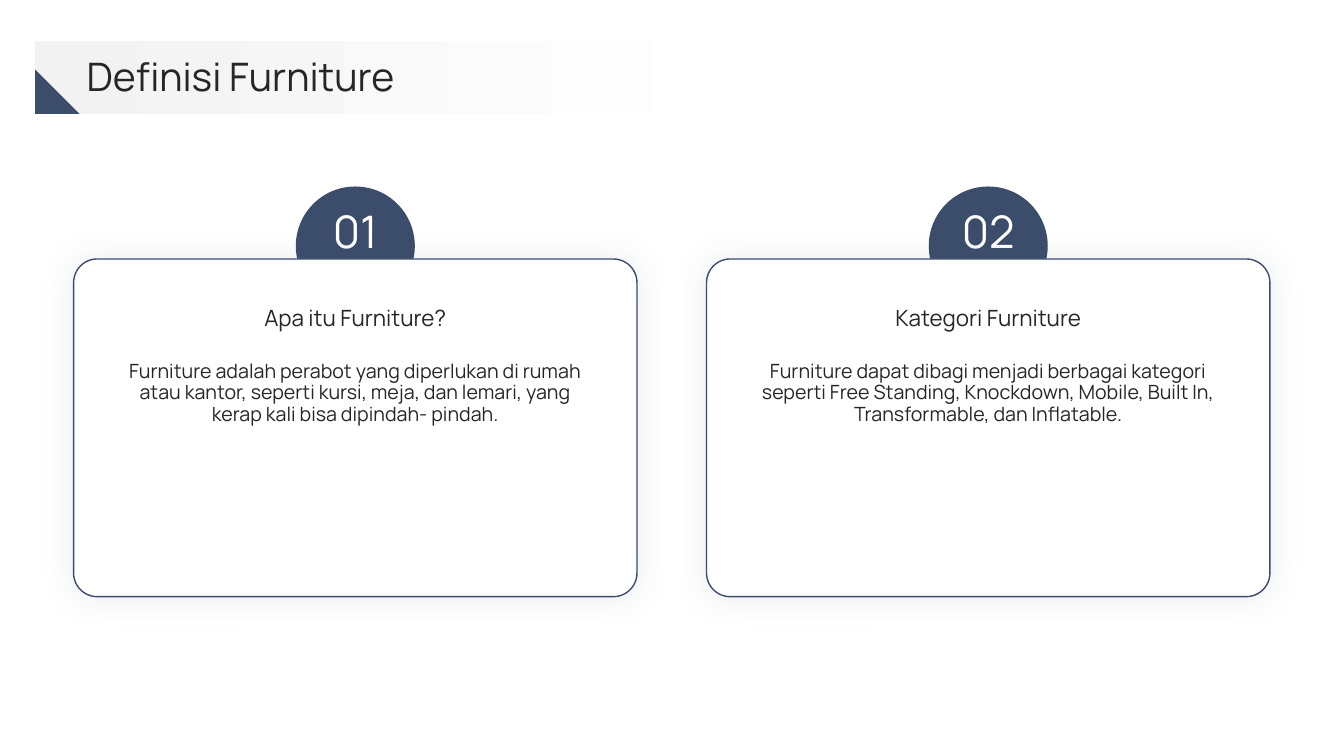
import pptx
import pptx.dml.color
import pptx.enum.shapes
import pptx.enum.text
import pptx.oxml
import pptx.oxml.ns
import pptx.util

Pt = pptx.util.Pt
SHAPES = pptx.enum.shapes.MSO_SHAPE
ALIGN = pptx.enum.text.PP_ALIGN
ANCHOR = pptx.enum.text.MSO_ANCHOR

CARDS = [
    ("01", "Apa itu Furniture?",
     "Furniture adalah perabot yang diperlukan di rumah atau kantor, seperti kursi, "
     "meja, dan lemari, yang kerap kali bisa dipindah- pindah."),
    ("02", "Kategori Furniture",
     "Furniture dapat dibagi menjadi berbagai kategori seperti Free Standing, "
     "Knockdown, Mobile, Built In, Transformable, dan Inflatable."),
]
CARD_LEFT, CARD_WIDTH, CARD_PITCH = 52.6, 402.4, 452.1
BADGE_SIZE, NUMBER_WIDTH, TEXT_WIDTH = 85, 64.8, 345.6


class FurnitureSlide:
    font = "Manrope"
    colors = {"navy": "3C4C6B", "ink": "262626", "white": "FFFFFF", "mist": "F2F2F2"}

    def __init__(self, slide):
        self.slide = slide

    def color(self, name):
        return pptx.dml.color.RGBColor.from_string(self.colors[name])

    def shape(self, kind, left, top, width, height, fill):
        item = self.slide.shapes.add_shape(kind, Pt(left), Pt(top), Pt(width), Pt(height))
        item.fill.solid()
        item.fill.fore_color.rgb = self.color(fill)
        item.line.fill.background()
        item.shadow.inherit = False
        return item

    def card(self, left, top, width, height):
        panel = self.shape(SHAPES.ROUNDED_RECTANGLE, left, top, width, height, "white")
        panel.adjustments[0] = 0.07
        panel.line.color.rgb = self.color("navy")
        panel.line.width = Pt(1)
        effects = panel.element.spPr.find(pptx.oxml.ns.qn("a:effectLst"))
        effects.append(pptx.oxml.parse_xml(
            f'<a:outerShdw {pptx.oxml.ns.nsdecls("a")} blurRad="{Pt(25)}" dist="0" '
            f'dir="5400000" algn="ctr" rotWithShape="0"><a:srgbClr val="{self.colors["navy"]}">'
            '<a:alpha val="10000"/></a:srgbClr></a:outerShdw>'))

    def gradient_band(self, left, top, width, height):
        band = self.shape(SHAPES.RECTANGLE, left, top, width, height, "mist")
        band.fill.gradient()
        band.fill.gradient_angle = 0
        for stop, (position, name) in zip(band.fill.gradient_stops, [(0, "mist"), (0.8, "white")]):
            stop.position = position
            stop.color.rgb = self.color(name)

    def text(self, words, left, top, width, height, size,
             color="ink", align=ALIGN.CENTER, anchor=ANCHOR.TOP):
        frame = self.slide.shapes.add_textbox(
            Pt(left), Pt(top), Pt(width), Pt(height)).text_frame
        frame.word_wrap = True
        frame.vertical_anchor = anchor
        frame.margin_left = frame.margin_right = frame.margin_top = frame.margin_bottom = 0
        frame.text = words
        paragraph = frame.paragraphs[0]
        paragraph.alignment = align
        paragraph.line_spacing = 0.9
        font = paragraph.runs[0].font
        font.name = self.font
        font.size = Pt(size)
        font.color.rgb = self.color(color)


def main():
    deck = pptx.Presentation()
    deck.slide_width, deck.slide_height = Pt(960), Pt(540)
    page = FurnitureSlide(deck.slides.add_slide(deck.slide_layouts[6]))

    for index, (number, heading, description) in enumerate(CARDS):
        left = CARD_LEFT + index * CARD_PITCH
        center = left + CARD_WIDTH / 2
        text_left = center - TEXT_WIDTH / 2
        page.shape(SHAPES.OVAL, center - BADGE_SIZE / 2, 133.2, BADGE_SIZE, BADGE_SIZE, "navy")
        page.text(number, center - NUMBER_WIDTH / 2, 149.8, NUMBER_WIDTH, 28.1, 32, "white")
        page.card(left, 185, CARD_WIDTH, 241.2)
        page.text(heading, text_left, 211, TEXT_WIDTH, 33.8, 16, anchor=ANCHOR.MIDDLE)
        page.text(description, text_left, 258.5, TEXT_WIDTH, 153.4, 14)

    page.gradient_band(25.2, 29.5, 643.7, 51.8)
    page.text("Definisi Furniture", 61.9, 38.2, 840.2, 36.7, 28,
              align=ALIGN.LEFT, anchor=ANCHOR.MIDDLE)
    page.shape(SHAPES.RIGHT_TRIANGLE, 25.2, 49.7, 31.7, 31.7, "navy")

    deck.save("out.pptx")


if __name__ == "__main__":
    main()
